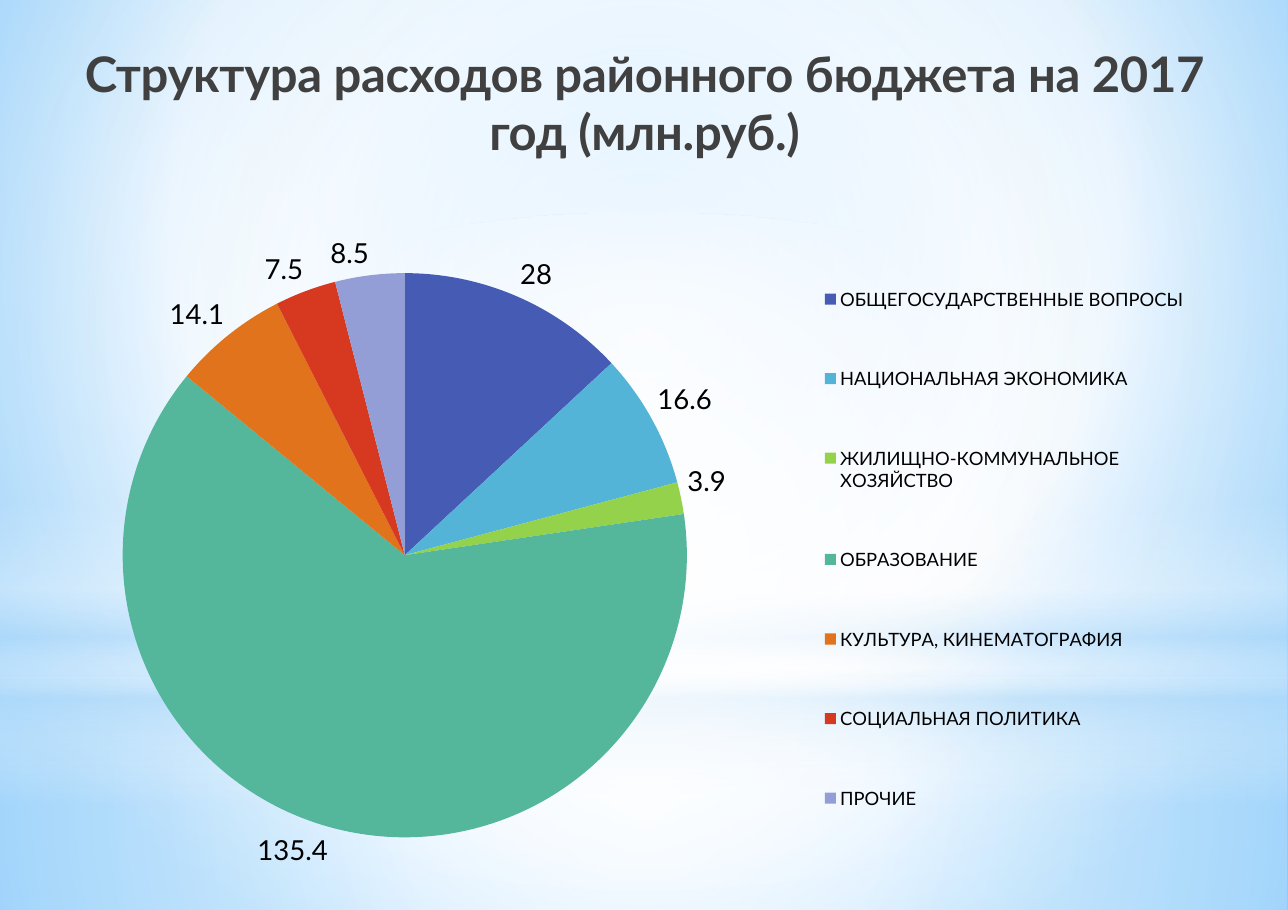
"""Build a slide with a pie chart of the 2017 district budget expenses."""
from pptx import Presentation
from pptx.chart.data import CategoryChartData
from pptx.dml.color import RGBColor
from pptx.enum.chart import XL_CHART_TYPE as ChartType, XL_LABEL_POSITION as LabelPosition
from pptx.enum.chart import XL_LEGEND_POSITION as LegendPosition
from pptx.enum.shapes import MSO_SHAPE as Shape
from pptx.enum.text import MSO_ANCHOR as Anchor, PP_ALIGN as Align
from pptx.oxml import parse_xml
from pptx.oxml.ns import nsdecls, qn
from pptx.util import Inches, Pt

TITLE = "Структура расходов районного бюджета на 2017 год (млн.руб.)"
EXPENSES = [
    ("ОБЩЕГОСУДАРСТВЕННЫЕ ВОПРОСЫ", 28, "465BB3"),
    ("НАЦИОНАЛЬНАЯ ЭКОНОМИКА", 16.6, "54B4D8"),
    ("ЖИЛИЩНО-КОММУНАЛЬНОЕ ХОЗЯЙСТВО", 3.9, "93D24A"),
    ("ОБРАЗОВАНИЕ", 135.4, "54B79C"),
    ("КУЛЬТУРА, КИНЕМАТОГРАФИЯ", 14.1, "E1731D"),
    ("СОЦИАЛЬНАЯ ПОЛИТИКА", 7.5, "D63820"),
    ("ПРОЧИЕ", 8.5, "939DD6"),
]
THEME = {
    "font": "Lato", "title": "404040", "text": "000000",
    "title_size": 32, "label_size": 18, "legend_size": 12, "title_spacing": -20,
}
SLIDE_SIZE = (11.69, 8.26)
TITLE_BOX = (0.35, 0.3, 11, 1.25)
CHART_BOX = (0.26, 1.97, 10.67, 6.08)
PIE_AREA = (0.08, 0.08, 0.48, 0.85)
LEGEND_AREA = (0.67, 0.02, 0.32, 0.95)
CENTER = (50, 50, 50, 50)
BACKGROUND = ([(0, "9ED5FF", 100), (60, "FFFFFF", 100), (100, "5BB9FF", 100)], (20, 10, 20, 60))
GLOWS = [
    (Shape.RECTANGLE, (0, 6.15, 11.69, 2.11),
     [(0, "FFFFFF", 91), (37, "FFFFFF", 76), (100, "B4DCFA", 79)], CENTER),
    (Shape.RECTANGLE, (0, 0, 11.69, 6.15),
     [(0, "FFFFFF", 89), (48, "FFFFFF", 62), (100, "B4DCFA", 79)], CENTER),
    (Shape.RECTANGLE, (0, 4.54, 11.69, 2.75),
     [(0, "FFFFFF", 0), (29, "FFFFFF", 30), (45, "B4DCFA", 40),
      (55, "FFFFFF", 26), (65, "B4DCFA", 60), (100, "FFFFFF", 0)], None),
    (Shape.OVAL, (0, 1.93, 11.69, 6.15), [(0, "FFFFFF", 100), (56, "FFFFFF", 0)], CENTER),
]


def inches(values):
    return [Inches(value) for value in values]


def style_font(font, size, color, bold=False):
    font.name = THEME["font"]
    font.size = Pt(size)
    font.bold = bold
    font.color.rgb = RGBColor.from_string(color)


def apply_gradient(fill, element, stops, focus):
    fill.solid()
    solid = element.find(".//" + qn("a:solidFill"))
    stop_xml = "".join(
        f'<a:gs pos="{position * 1000}"><a:srgbClr val="{color}">'
        f'<a:alpha val="{opacity * 1000}"/></a:srgbClr></a:gs>'
        for position, color, opacity in stops
    )
    direction = '<a:lin ang="5400000" scaled="0"/>'
    if focus:
        edges = " ".join(f'{side}="{value * 1000}"' for side, value in zip("ltrb", focus))
        direction = f'<a:path path="circle"><a:fillToRect {edges}/></a:path>'
    gradient = parse_xml(
        f'<a:gradFill {nsdecls("a")} rotWithShape="1"><a:gsLst>{stop_xml}</a:gsLst>{direction}</a:gradFill>'
    )
    solid.getparent().replace(solid, gradient)


def add_backdrop(slide):
    apply_gradient(slide.background.fill, slide.element, *BACKGROUND)
    for kind, box, stops, focus in GLOWS:
        shape = slide.shapes.add_shape(kind, *inches(box))
        shape.shadow.inherit = False
        shape.line.fill.background()
        apply_gradient(shape.fill, shape.element, stops, focus)


def format_title(slide):
    title = slide.shapes.title
    title.left, title.top, title.width, title.height = inches(TITLE_BOX)
    frame = title.text_frame
    frame.text = TITLE
    frame.word_wrap = True
    frame.vertical_anchor = Anchor.MIDDLE
    frame.margin_left = frame.margin_right = Inches(0.11)
    frame.margin_top = frame.margin_bottom = Inches(0.06)
    paragraph = frame.paragraphs[0]
    paragraph.alignment = Align.CENTER
    style_font(paragraph.font, THEME["title_size"], THEME["title"], True)
    paragraph.runs[0].font._element.set("spc", str(THEME["title_spacing"]))
    title.element.getparent().append(title.element)


def set_layout(parent, after, area, target=""):
    for existing in parent.findall(qn("c:layout")):
        parent.remove(existing)
    modes = "".join(f'<c:{axis}Mode val="edge"/>' for axis in "xy")
    sizes = "".join(f'<c:{name} val="{value}"/>' for name, value in zip("xywh", area))
    layout = f'<c:layout {nsdecls("c")}><c:manualLayout>{target}{modes}{sizes}</c:manualLayout></c:layout>'
    position = 0 if after is None else parent.index(after) + 1
    parent.insert(position, parse_xml(layout))


def add_pie(slide):
    data = CategoryChartData()
    data.categories = [name for name, _, _ in EXPENSES]
    data.add_series("Series 1", [value for _, value, _ in EXPENSES])
    chart = slide.shapes.add_chart(ChartType.PIE, *inches(CHART_BOX), data).chart
    chart.has_title = False
    style_font(chart.font, THEME["label_size"], THEME["text"])
    plot = chart.plots[0]
    plot.vary_by_categories = True
    for index, (_, _, color) in enumerate(EXPENSES):
        point_format = plot.series[0].points[index].format
        point_format.fill.solid()
        point_format.fill.fore_color.rgb = RGBColor.from_string(color)
        point_format.line.fill.background()
    labels = plot.series[0].data_labels
    labels.show_value = True
    labels.position = LabelPosition.OUTSIDE_END
    style_font(labels.font, THEME["label_size"], THEME["text"])
    chart.has_legend = True
    legend = chart.legend
    legend.position = LegendPosition.RIGHT
    legend.include_in_layout = False
    style_font(legend.font, THEME["legend_size"], THEME["text"])
    legend_element = legend._element
    set_layout(legend_element, legend_element.find(qn("c:legendPos")), LEGEND_AREA)
    plot_area = chart._chartSpace.find(".//" + qn("c:plotArea"))
    set_layout(plot_area, None, PIE_AREA, '<c:layoutTarget val="inner"/>')


def main():
    presentation = Presentation()
    presentation.slide_width, presentation.slide_height = inches(SLIDE_SIZE)
    slide = presentation.slides.add_slide(presentation.slide_layouts[5])
    add_backdrop(slide)
    format_title(slide)
    add_pie(slide)
    presentation.save("out.pptx")


if __name__ == "__main__":
    main()
